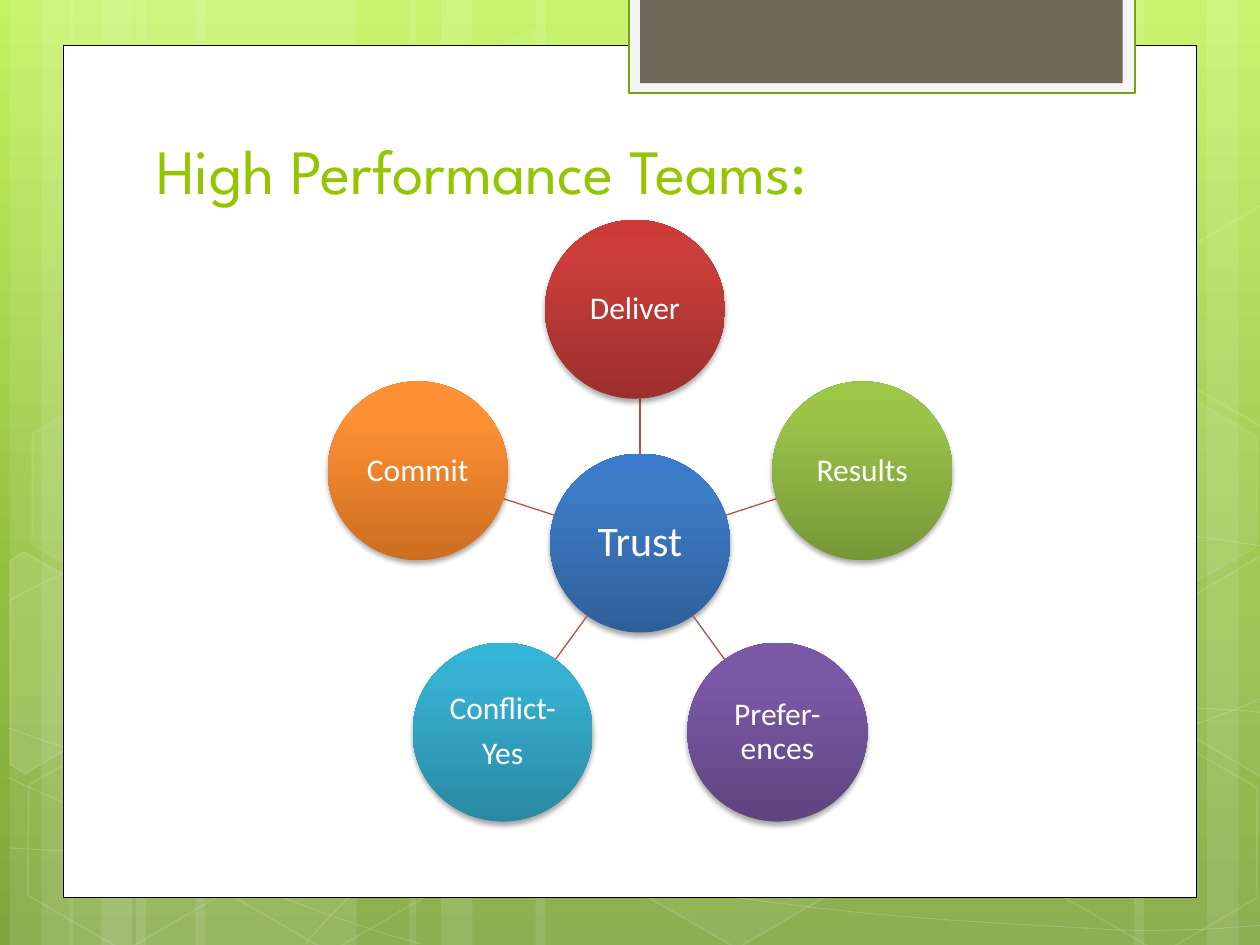
from math import cos, radians, sin

from pptx import Presentation
from pptx import util as u
from pptx.dml.color import RGBColor
from pptx.enum import shapes, text
from pptx.oxml import parse_xml
from pptx.oxml.ns import nsdecls, qn

SCALE = 9144
WHITE = RGBColor(0xFF, 0xFF, 0xFF)
BLACK = RGBColor(0x00, 0x00, 0x00)
LIME = RGBColor(0x94, 0xC6, 0x00)
TAB_EDGE = RGBColor(0x74, 0xA5, 0x10)
TAB_RIM = RGBColor(0xF5, 0xF5, 0xF5)
TAB = RGBColor(0x71, 0x68, 0x5A)
SPOKE = RGBColor(0xBF, 0x4C, 0x48)


def rgb3(*codes):
    return [RGBColor.from_string(c) for c in codes]


BACKDROP = rgb3("C3F35F", "93BF3F", "81A53E")
BLUE = rgb3("2F5F99", "3D7CC7", "3A7CCB")
RED = rgb3("9C2F2D", "CB3E3A", "CE3B37")
GREEN = rgb3("779737", "9BC348", "9DC746")
PURPLE = rgb3("5F4480", "7B58A6", "7C57A8")
TEAL = rgb3("2A88A2", "37B1D2", "34B4D6")
ORANGE = rgb3("CC6E20", "FF9034", "FF9136")


def px(n):
    return u.Emu(round(n * SCALE))


def set_alpha(parent, percent):
    clr = next(parent.iter(qn("a:srgbClr")))
    clr.append(parse_xml(f'<a:alpha {nsdecls("a")} val="{percent * 1000}"/>'))


def set_gradient(parent, colors, middle, angle):
    stops = "".join(
        f'<a:gs pos="{pos * 1000}"><a:srgbClr val="{c}"/></a:gs>'
        for pos, c in zip((0, middle, 100), colors))
    solid = parent.find(qn("a:solidFill"))
    parent.replace(solid, parse_xml(
        f'<a:gradFill {nsdecls("a")} rotWithShape="1"><a:gsLst>{stops}</a:gsLst>'
        f'<a:lin ang="{angle * 60000}" scaled="0"/></a:gradFill>'))


def write(tf, content, size, font, color, align=text.PP_ALIGN.LEFT,
          anchor=text.MSO_ANCHOR.MIDDLE, inset=None, spacing=1.0, after=0):
    tf.word_wrap = True
    tf.vertical_anchor = anchor
    if inset is not None:
        tf.margin_left = tf.margin_right = tf.margin_top = tf.margin_bottom = px(inset)
    for i, line in enumerate(content.split("\n")):
        p = tf.add_paragraph() if i else tf.paragraphs[0]
        p.alignment, p.line_spacing, p.space_after = align, spacing, u.Pt(after)
        r = p.add_run()
        r.text = line
        r.font.size, r.font.name, r.font.color.rgb = u.Pt(size), font, color


def bezier(points, steps=12):
    path = [points[0]]
    for i in range(0, len(points) - 1, 3):
        a, b, c, d = points[i:i + 4]
        for k in range(1, steps + 1):
            t = k / steps
            v = 1 - t
            path.append(tuple(
                v ** 3 * a[j] + 3 * v * v * t * b[j] + 3 * v * t * t * c[j] + t ** 3 * d[j]
                for j in (0, 1)))
    return path


class Deck:
    def __init__(self, width, height):
        self.prs = Presentation()
        self.prs.slide_width, self.prs.slide_height = px(width), px(height)
        self.s = self.prs.slides.add_slide(self.prs.slide_layouts[6])
        self.font = "Calibri"

    def background(self, colors, middle, angle):
        self.s.background.fill.solid()
        self.s.background.fill.fore_color.rgb = colors[0]
        set_gradient(self.s._element.find(".//" + qn("p:bgPr")), colors, middle, angle)

    def paint(self, sp, fill=None, alpha=None, line=None, weight=1, line_alpha=None):
        sp.shadow.inherit = False
        if fill is None:
            sp.fill.background()
        else:
            sp.fill.solid()
            sp.fill.fore_color.rgb = fill
            if alpha:
                set_alpha(sp._element.spPr.find(qn("a:solidFill")), alpha)
        if line is None:
            sp.line.fill.background()
        else:
            sp.line.color.rgb = line
            sp.line.width = u.Pt(weight)
            if line_alpha:
                set_alpha(sp._element.spPr.find(qn("a:ln")), line_alpha)
        return sp

    def shape(self, kind, x, y, w, h, **style):
        sp = self.s.shapes.add_shape(kind, px(x), px(y), px(w), px(h))
        return self.paint(sp, **style)

    def rect(self, x, y, w, h, **style):
        return self.shape(shapes.MSO_SHAPE.RECTANGLE, x, y, w, h, **style)

    def hexagon(self, x, y, alpha, line_alpha):
        sp = self.shape(shapes.MSO_SHAPE.HEXAGON, x, y, 175, 152,
                        fill=WHITE if alpha else None, alpha=alpha,
                        line=WHITE, line_alpha=line_alpha)
        sp.adjustments[0] = 0.285
        sp.rotation = 30

    def outline(self, points, close=False, **style):
        pts = [(px(x), px(y)) for x, y in points]
        fb = self.s.shapes.build_freeform(*pts[0])
        fb.add_line_segments(pts[1:], close=close)
        self.paint(fb.convert_to_shape(), line=WHITE, **style)

    def ball(self, cx, cy, label, colors, size=18):
        w, h = 143, 142
        sp = self.shape(shapes.MSO_SHAPE.OVAL, cx - w / 2, cy - h / 2, w, h, fill=colors[0])
        spPr = sp._element.spPr
        set_gradient(spPr, colors, 80, 270)
        spPr.find(qn("a:effectLst")).append(parse_xml(
            f'<a:outerShdw {nsdecls("a")} blurRad="39370" dist="22860" dir="5400000" '
            'rotWithShape="0"><a:srgbClr val="000000"><a:alpha val="35000"/>'
            '</a:srgbClr></a:outerShdw>'))
        write(sp.text_frame, label, size, self.font, WHITE, align=text.PP_ALIGN.CENTER,
              inset=2, spacing=0.9, after=size * 0.35)

    def connector(self, x1, y1, x2, y2):
        cn = self.s.shapes.add_connector(
            shapes.MSO_CONNECTOR.STRAIGHT, px(x1), px(y1), px(x2), px(y2))
        cn.line.color.rgb, cn.line.width = SPOKE, u.Pt(0.75)
        cn._element.spPr.append(parse_xml(f'<a:effectLst {nsdecls("a")}/>'))

    def title(self, x, y, w, h, content):
        tb = self.s.shapes.add_textbox(px(x), px(y), px(w), px(h))
        write(tb.text_frame, content, 36, "League Spartan", LIME,
              anchor=text.MSO_ANCHOR.BOTTOM)


STRIPES = [(108, 175), (8, 50), (33, 83), (155, 175), (55, 50), (80, 83),
           (733, 175), (958, 50), (900, 83), (425, 308), (325, 50), (350, 83)]
CURVES = [
    [(7, 673), (61, 676), (115, 679), (190, 678), (265, 677), (358, 675), (458, 665),
     (558, 655), (700, 636), (792, 617), (883, 598), (977, 568), (1007, 551)],
    [(7, 477), (36, 461), (65, 446), (121, 431), (178, 416), (259, 394), (347, 387),
     (436, 380), (544, 379), (654, 387), (764, 395), (947, 426), (1007, 434)],
    [(6, 617), (127, 672), (247, 727), (334, 749)],
    [(7, 578), (38, 589), (70, 600), (128, 616), (186, 631), (273, 656), (357, 673),
     (440, 690), (545, 708), (628, 718), (711, 729), (800, 733), (853, 736),
     (905, 740), (919, 738), (945, 738), (971, 737), (989, 735), (1007, 734)],
    [(242, 749), (260, 729), (278, 709), (302, 691), (326, 673), (360, 653), (388, 639),
     (416, 625), (433, 619), (470, 609), (506, 599), (573, 585), (608, 578),
     (644, 571), (649, 571), (680, 569), (711, 566), (760, 563), (794, 562),
     (829, 561), (886, 562), (886, 562), (908, 562), (931, 562), (953, 562),
     (971, 563), (988, 564), (997, 565), (1006, 566), (1003, 565), (1006, 566)],
]
HEXAGONS = [(334, 36, 4, 8), (497, 589, 6, 12), (11, 591, None, 12), (14, 312, 7, 8),
            (174, 592, None, 12), (753, 453, 10, 12), (834, 593, None, 12),
            (834, 314, 7, 8)]
CUT_HEXAGONS = [
    ([(8, 445), (19, 438), (96, 482), (95, 570), (20, 614), (8, 607)], 10),
    ([(926, 485), (1001, 441), (1009, 446), (1009, 613), (1002, 617), (926, 573)], 4),
    ([(926, 207), (1001, 163), (1010, 168), (1009, 335), (1002, 339), (926, 295)], None),
]
TEAM = [("Deliver", RED, -4), ("Results", GREEN, 0), ("Prefer-ences", PURPLE, 0),
        ("Conflict-\nYes", TEAL, 0), ("Commit", ORANGE, 0)]


def main():
    d = Deck(1000, 750)
    d.background(BACKDROP, 62, 90)
    for x, w in STRIPES:
        d.rect(x, 0, w, 750, fill=WHITE, alpha=10)
    for curve in CURVES:
        d.outline(bezier(curve), weight=0.5, line_alpha=20)
    for hexagon in HEXAGONS:
        d.hexagon(*hexagon)
    for points, alpha in CUT_HEXAGONS:
        d.outline(points, close=True, fill=WHITE if alpha else None, alpha=alpha,
                  line_alpha=12)

    d.rect(50, 36, 900, 676, fill=WHITE, line=BLACK, weight=0.5)
    d.rect(499, -2, 402, 76, fill=TAB_RIM, line=TAB_EDGE, weight=1.25)
    d.rect(508, -2, 383, 68, fill=TAB)

    cx, cy, ring, inner, outer = 508, 431, 185.5, 71, 114
    d.ball(cx, cy, "Trust", BLUE, size=24)
    for i, (label, colors, shift) in enumerate(TEAM):
        a = radians(i * 360 / len(TEAM))
        dx, dy = sin(a), -cos(a)
        d.connector(cx + inner * dx, cy + inner * dy, cx + outer * dx, cy + outer * dy)
        d.ball(cx + ring * dx + shift, cy + ring * dy, label, colors)
    d.title(114, 112, 768, 57, "High Performance Teams:")
    d.prs.save("out.pptx")


if __name__ == "__main__":
    main()
